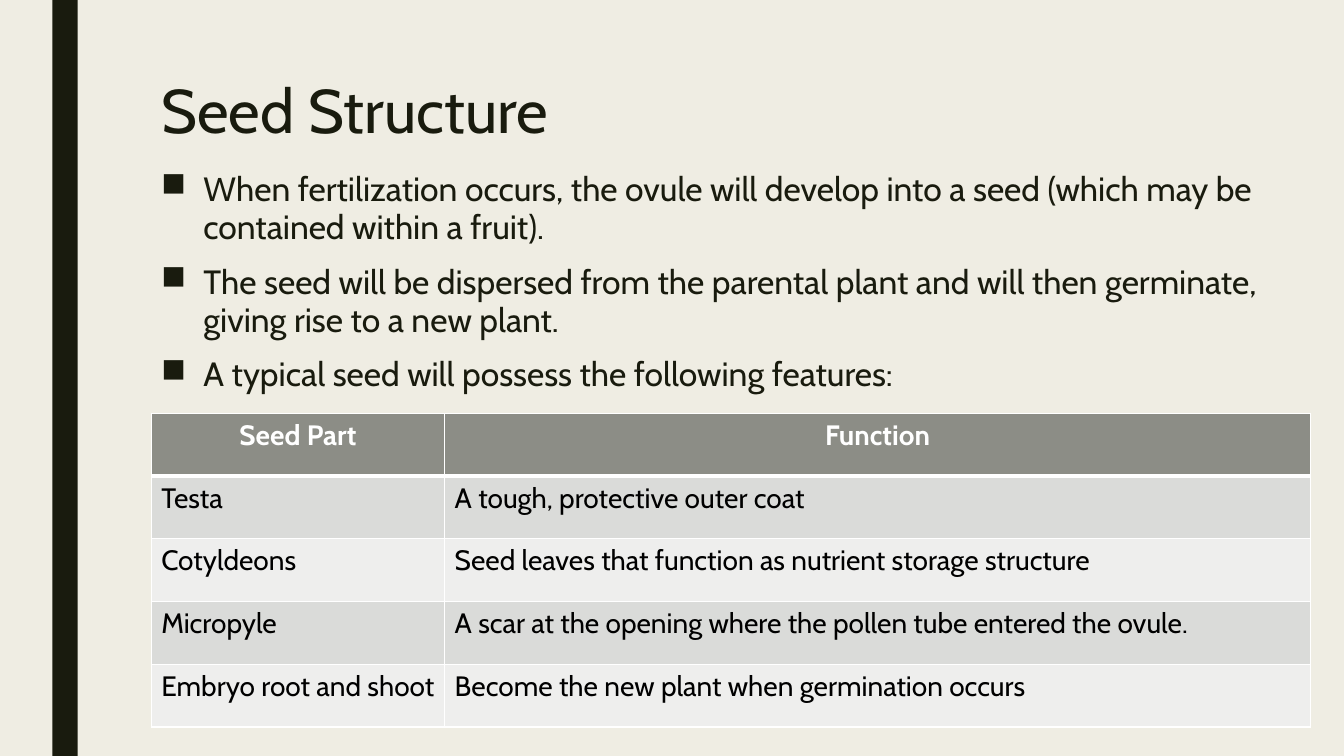
from dataclasses import dataclass

from lxml import etree
from pptx import Presentation
from pptx.dml.color import RGBColor
from pptx.enum.shapes import MSO_SHAPE
from pptx.enum.text import MSO_ANCHOR, MSO_AUTO_SIZE, PP_ALIGN
from pptx.oxml.ns import qn
from pptx.util import Inches, Pt

RECT = MSO_SHAPE.RECTANGLE
TOP = MSO_ANCHOR.TOP
NO_FIT = MSO_AUTO_SIZE.NONE
LEFT, CENTER = PP_ALIGN.LEFT, PP_ALIGN.CENTER


@dataclass(frozen=True)
class Theme:
    """Colours, type sizes and grid unit of the slide."""
    font: str = "Cabin"
    paper: str = "EFEDE3"
    ink: str = "191B0E"
    white: str = "FFFFFF"
    black: str = "000000"
    header: str = "8C8D86"
    bands: tuple = ("DADBD9", "EEEEED")
    title_size: int = 44
    body_size: int = 24
    table_size: int = 20
    unit: float = 0.25


class SlideBuilder:
    """Places styled elements on one slide by grid columns and rows."""

    def __init__(self, prs, theme):
        """Add a title-only slide with the theme's background."""
        self.theme = theme
        self.s = prs.slides.add_slide(prs.slide_layouts[5])
        fill = self.s.background.fill
        fill.solid()
        fill.fore_color.rgb = RGBColor.from_string(theme.paper)

    def grid(self, *cells):
        """Turn grid counts into lengths."""
        return [Inches(n * self.theme.unit) for n in cells]

    def style(self, p, size, color, bold=False):
        """Format every run of a paragraph."""
        for r in p.runs:
            r.font.name = self.theme.font
            r.font.size = Pt(size)
            r.font.bold = bold
            r.font.color.rgb = RGBColor.from_string(color)

    def bar(self, *box):
        """Draw a plain vertical bar."""
        sp = self.s.shapes.add_shape(RECT, *self.grid(*box))
        sp.shadow.inherit = False
        sp.fill.solid()
        sp.fill.fore_color.rgb = RGBColor.from_string(self.theme.ink)
        sp.line.fill.background()

    def title(self, text, *box):
        """Fill and place the title placeholder."""
        sp = self.s.shapes.title
        sp.left, sp.top, sp.width, sp.height = self.grid(*box)
        tf = sp.text_frame
        tf.text = text
        tf.vertical_anchor = TOP
        tf.auto_size = NO_FIT
        p = tf.paragraphs[0]
        p.alignment = LEFT
        p.line_spacing = 0.89
        self.style(p, self.theme.title_size, self.theme.ink)

    def bullets(self, items, *box):
        """Add a text box of square-bulleted paragraphs."""
        tf = self.s.shapes.add_textbox(*self.grid(*box)).text_frame
        tf.word_wrap = True
        tf.text = "\n".join(items)
        for p in tf.paragraphs:
            p.line_spacing = 0.94
            p.space_before, p.space_after = Pt(10), Pt(2)
            self.style(p, self.theme.body_size, self.theme.ink)
            pPr = p._p.get_or_add_pPr()
            pPr.set("marL", str(Inches(0.42)))
            pPr.set("indent", str(Inches(-0.42)))
            etree.SubElement(pPr, qn("a:buChar"), char="■")

    def border(self, cell, side, width):
        """Draw one white side of a table cell."""
        tcPr = cell._tc.get_or_add_tcPr()
        ln = etree.SubElement(tcPr, qn(f"a:ln{side}"), w=str(Pt(width)))
        fill = etree.SubElement(ln, qn("a:solidFill"))
        etree.SubElement(fill, qn("a:srgbClr"), val=self.theme.white)

    def cell(self, cell, text, row):
        """Write and format one table cell."""
        t = self.theme
        is_header = row == 0
        for side in "LRTB":
            thick = (is_header and side == "B") or (row == 1 and side == "T")
            self.border(cell, side, 3 if thick else 1)
        cell.fill.solid()
        color = t.header if is_header else t.bands[(row - 1) % 2]
        cell.fill.fore_color.rgb = RGBColor.from_string(color)
        cell.text = text
        p = cell.text_frame.paragraphs[0]
        p.alignment = CENTER if is_header else LEFT
        self.style(p, t.table_size, t.white if is_header else t.black, is_header)

    def table(self, rows, widths, *box):
        """Add a banded table with a header row."""
        frame = self.s.shapes.add_table(len(rows), len(widths), *self.grid(*box))
        for column, width in zip(frame.table.columns, self.grid(*widths)):
            column.width = width
        for i, row in enumerate(rows):
            for j, text in enumerate(row):
                self.cell(frame.table.cell(i, j), text, i)


FACTS = [
    "When fertilization occurs, the ovule will develop into a seed (which may be contained within a fruit).",
    "The seed will be dispersed from the parental plant and will then germinate, giving rise to a new plant.",
    "A typical seed will possess the following features:",
]
SEED_PARTS = [
    ("Seed Part", "Function"),
    ("Testa", "A tough, protective outer coat"),
    ("Cotyldeons", "Seed leaves that function as nutrient storage structure"),
    ("Micropyle", "A scar at the opening where the pollen tube entered the ovule."),
    ("Embryo root and shoot", "Become the new plant when germination occurs"),
]


def main():
    """Build and save the seed structure slide."""
    prs = Presentation()
    prs.slide_width, prs.slide_height = Inches(13.33), Inches(7.5)
    slide = SlideBuilder(prs, Theme())
    slide.bar(2.08, 0, 1, 30)
    slide.title("Seed Structure", 6, 3, 42, 6.48)
    slide.bullets(FACTS, 6, 6.6, 46, 15.68)
    slide.table(SEED_PARTS, (11.64, 34.36), 6, 16.4, 46, 12.45)
    prs.save("out.pptx")


if __name__ == "__main__":
    main()
